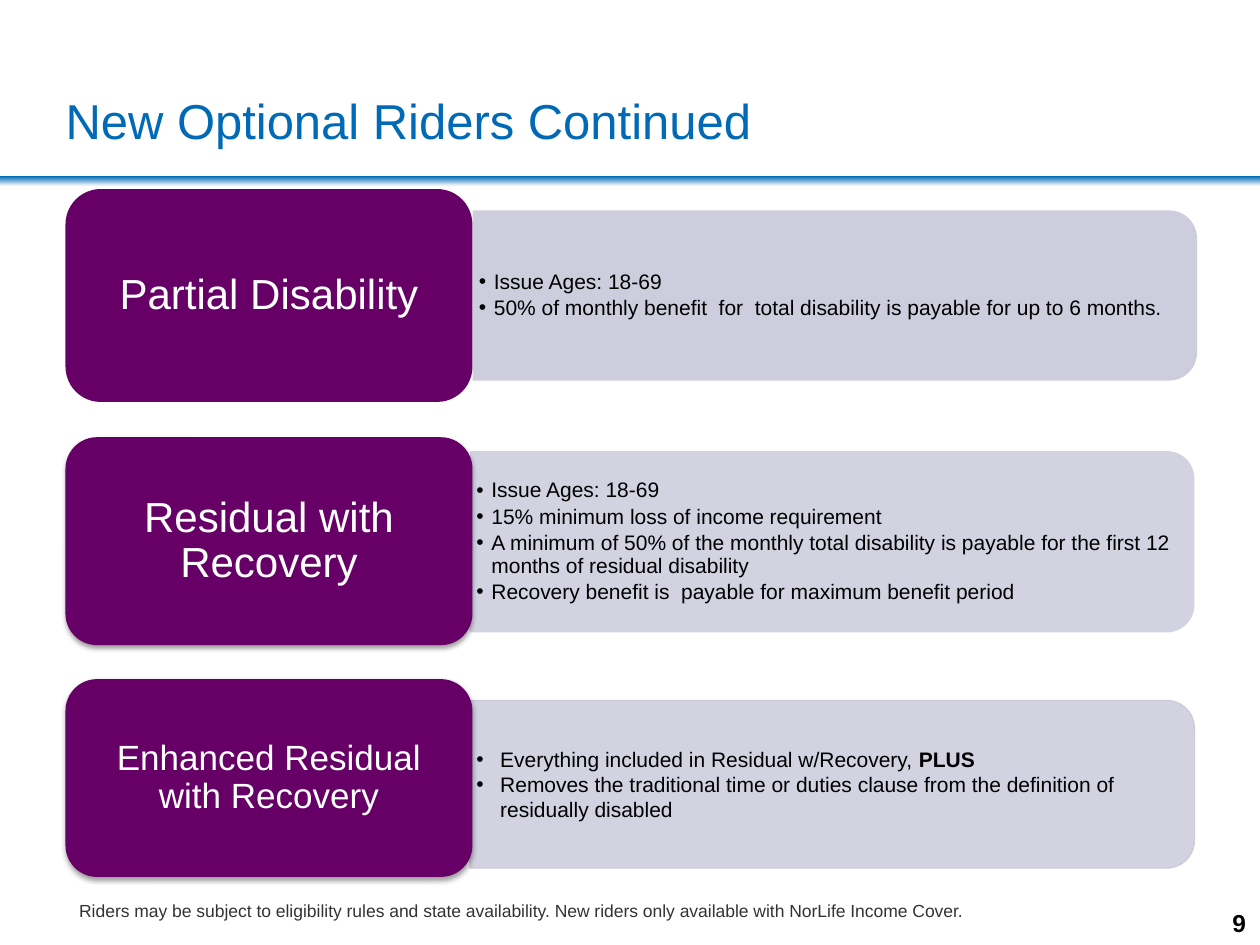
from math import cos, pi, sin
from lxml import etree
from pptx import Presentation
from pptx.dml.color import RGBColor
from pptx.enum.shapes import MSO_SHAPE
from pptx.enum.text import MSO_ANCHOR, PP_ALIGN
from pptx.oxml import parse_xml
from pptx.oxml.ns import qn
from pptx.util import Inches, Pt

RECT, ROUND = MSO_SHAPE.RECTANGLE, MSO_SHAPE.ROUNDED_RECTANGLE
MIDDLE, BOTTOM = MSO_ANCHOR.MIDDLE, MSO_ANCHOR.BOTTOM
LEFT, CENTER, RIGHT = PP_ALIGN.LEFT, PP_ALIGN.CENTER, PP_ALIGN.RIGHT
NS = "http://schemas.openxmlformats.org/drawingml/2006/main"
SHADOW = (f'<a:effectLst xmlns:a="{NS}"><a:outerShdw blurRad="39370" dist="20320" '
          'dir="5400000" rotWithShape="0"><a:srgbClr val="000000">'
          '<a:alpha val="38000"/></a:srgbClr></a:outerShdw></a:effectLst>')


def color(code):
    return RGBColor.from_string(code)


def write(para, text, size, code, bold=False):
    run = para.add_run()
    run.text = text
    font = run.font
    font.name, font.size, font.bold = "Arial", Pt(size), bold
    font.color.rgb = color(code)


prs = Presentation()
prs.slide_width, prs.slide_height = Inches(10), Inches(7.5)
slide = prs.slides.add_slide(prs.slide_layouts[5])
shapes = slide.shapes

rule = shapes.add_shape(RECT, 0, Inches(1.4), Inches(10), Inches(0.07))
rule.shadow.inherit = False
rule.line.fill.background()
rule.fill.gradient()
rule.fill.gradient_angle = 270
for stop, code in zip(rule.fill.gradient_stops, ("006AB6", "E7F1F8")):
    stop.color.rgb = color(code)

title = shapes.title
title.left, title.top = Inches(0.52), Inches(0.5)
title.width, title.height = Inches(8.9), Inches(0.91)
frame = title.text_frame
frame.margin_left = frame.margin_right = frame.margin_top = frame.margin_bottom = 0
frame.vertical_anchor, frame.word_wrap = MIDDLE, False
frame.paragraphs[0].alignment = LEFT
write(frame.paragraphs[0], "New Optional Riders Continued", 28, "006AB6")

riders = [
    dict(name="Residual with Recovery", size=24, top=3.47, high=1.65, curve=0.25,
         x=3.73, y=3.58, tall=1.44, fill="CECEDE", clear=True, edge=False,
         shade=True, dent=0.12, lead=0.9, gap=2,
         items=[["Issue Ages: 18-69"],
                ["15% minimum loss of income requirement"],
                ["A minimum of 50% of the monthly total disability is payable "
                 "for the first 12 months of residual disability"],
                ["Recovery benefit is  payable for maximum benefit period"]]),
    dict(name="Enhanced Residual with Recovery", size=20, top=5.39, high=1.57, curve=0.25,
         x=3.73, y=5.56, tall=1.33, fill="CECEDE", clear=True, edge=True,
         shade=True, dent=0.19, lead=1, gap=0,
         items=[["Everything included in Residual w/Recovery, ", "PLUS"],
                ["Removes the traditional time or duties clause from the "
                 "definition of residually disabled"]]),
    dict(name="Partial Disability", size=24, top=1.5, high=1.69, curve=0.28,
         x=3.75, y=1.67, tall=1.35, fill="CDCDDE", clear=False, edge=False,
         shade=False, dent=0.12, lead=0.9, gap=2,
         items=[["Issue Ages: 18-69"],
                ["50% of monthly benefit  for  total disability is payable "
                 "for up to 6 months."]]),
]
wide, bend, steps = 5.75, 0.22, 12

for rider in riders:
    x, y, tall = rider["x"], rider["y"], rider["tall"]
    points = []
    for mid, start in ((y + bend, -pi / 2), (y + tall - bend, 0)):
        for step in range(steps + 1):
            turn = start + pi / 2 * step / steps
            points.append((Inches(x + wide - bend + bend * cos(turn)),
                           Inches(mid + bend * sin(turn))))
    points.append((Inches(x), Inches(y + tall)))
    pen = shapes.build_freeform(Inches(x), Inches(y))
    pen.add_line_segments(points, close=True)
    panel = pen.convert_to_shape()
    panel.shadow.inherit = False
    panel.fill.solid()
    panel.fill.fore_color.rgb = color(rider["fill"])
    if rider["edge"]:
        panel.line.color.rgb = color("C9C9D9")
        panel.line.width = Pt(0.75)
    else:
        panel.line.fill.background()
    if rider["clear"]:
        for tint in panel._element.spPr.iter(qn("a:srgbClr")):
            etree.SubElement(tint, qn("a:alpha"), val="90000")
    frame = panel.text_frame
    frame.word_wrap, frame.vertical_anchor = True, MIDDLE
    frame.margin_left, frame.margin_right = Inches(0.05), Inches(0.11)
    frame.margin_top = frame.margin_bottom = Inches(0.08)
    for num, item in enumerate(rider["items"]):
        para = frame.add_paragraph() if num else frame.paragraphs[0]
        para.alignment, para.line_spacing = LEFT, rider["lead"]
        para.space_after = Pt(rider["gap"])
        props = para._p.get_or_add_pPr()
        dent = Inches(rider["dent"])
        props.set("marL", str(dent))
        props.set("indent", str(-dent))
        etree.SubElement(props, qn("a:buFont"), typeface="Arial")
        etree.SubElement(props, qn("a:buChar"), char="•")
        for part in item:
            write(para, part, 12, "000000", part == "PLUS")

    card = shapes.add_shape(ROUND, Inches(0.52), Inches(rider["top"]),
                            Inches(3.23), Inches(rider["high"]))
    card.adjustments[0] = rider["curve"] / rider["high"]
    card.fill.solid()
    card.fill.fore_color.rgb = color("660066")
    card.line.fill.background()
    if rider["shade"]:
        card._element.spPr.append(parse_xml(SHADOW))
    else:
        card.shadow.inherit = False
    frame = card.text_frame
    frame.word_wrap, frame.vertical_anchor = True, MIDDLE
    frame.margin_left = frame.margin_right = Inches(0.19)
    frame.margin_top = frame.margin_bottom = Inches(0.13)
    para = frame.paragraphs[0]
    para.alignment, para.line_spacing = CENTER, 0.9
    write(para, rider["name"], rider["size"], "FFFFFF")

page = shapes.add_textbox(Inches(7.56), Inches(6.92), Inches(2.33), Inches(0.52))
frame = page.text_frame
frame.margin_left = frame.margin_right = frame.margin_top = frame.margin_bottom = 0
frame.word_wrap, frame.vertical_anchor = True, BOTTOM
frame.paragraphs[0].alignment = RIGHT
write(frame.paragraphs[0], "9", 14, "000000", True)

note = shapes.add_textbox(Inches(0.53), Inches(7.09), Inches(7.32), Inches(0.27))
note.text_frame.word_wrap = True
write(note.text_frame.paragraphs[0],
      "Riders may be subject to eligibility rules and state availability. "
      "New riders only available with NorLife Income Cover.", 10, "333333")

prs.save("out.pptx")
